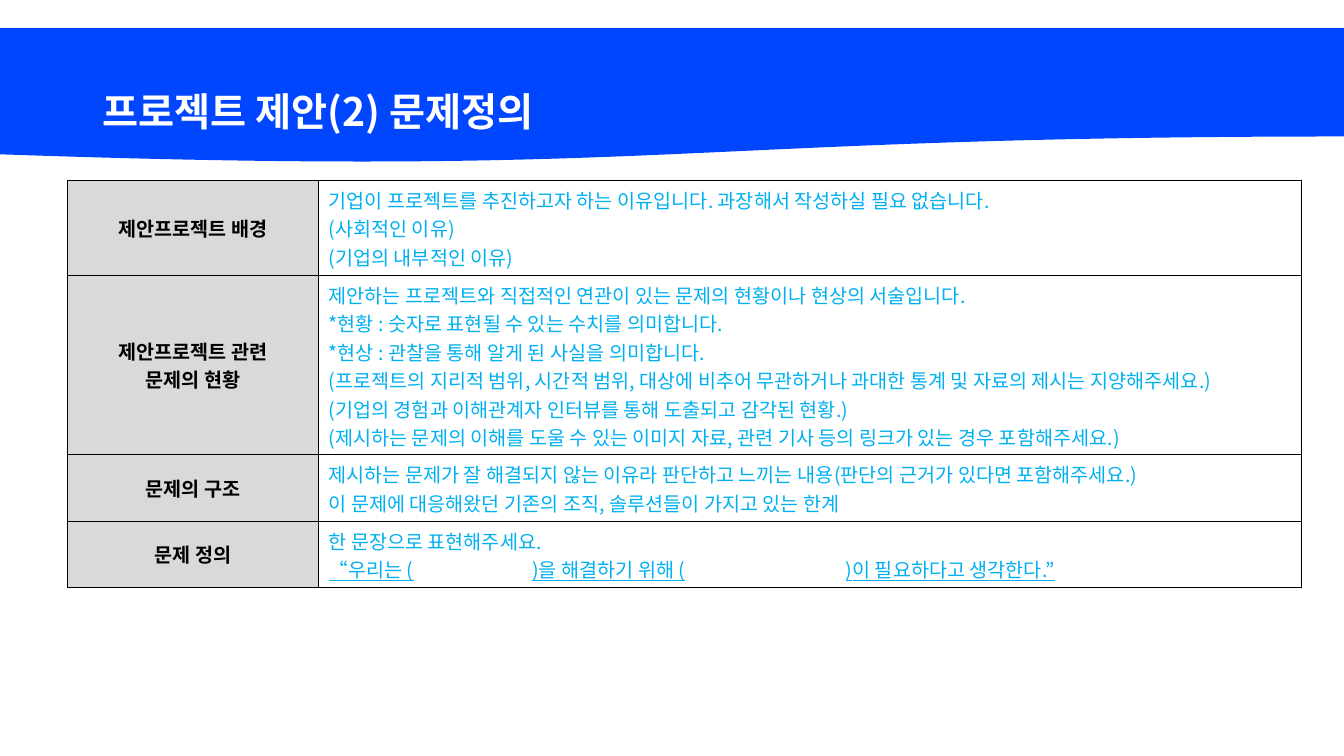
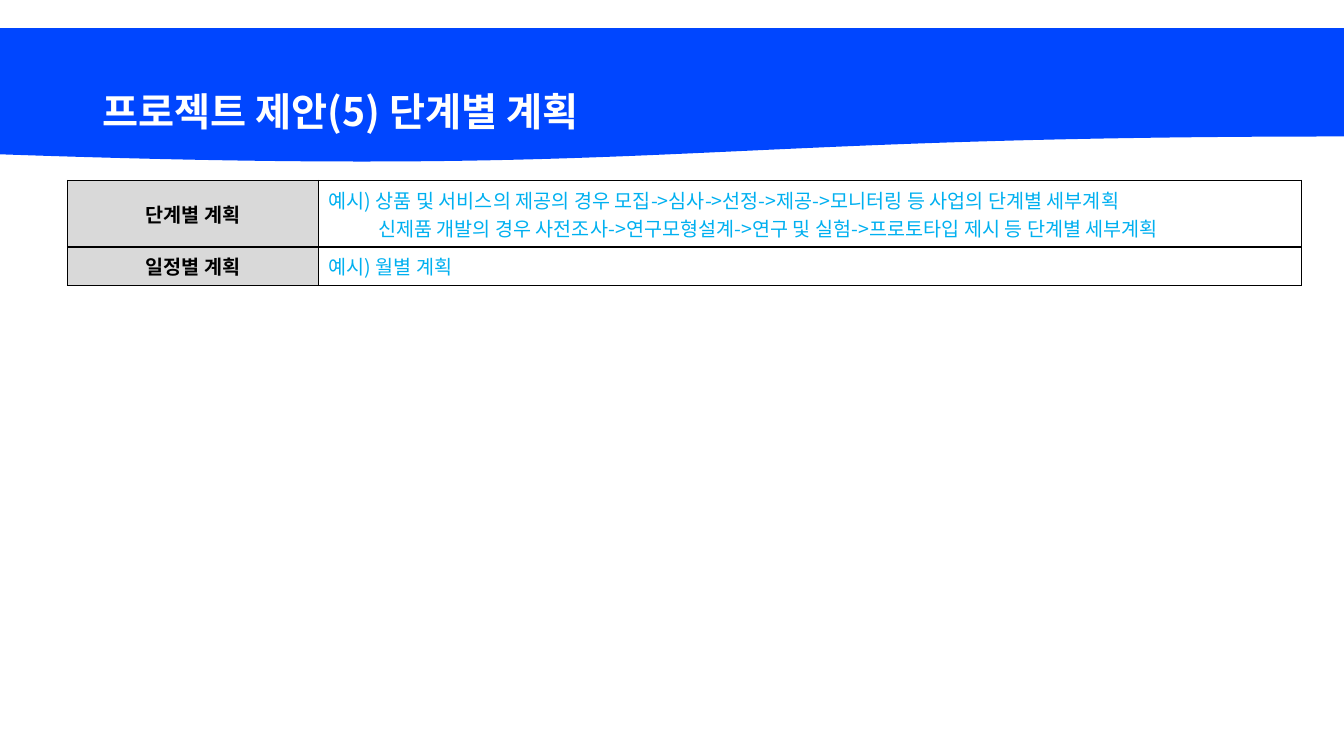
from dataclasses import dataclass

from lxml.etree import SubElement
from pptx import Presentation
from pptx.dml.color import RGBColor
from pptx.enum.shapes import MSO_SHAPE as Shape
from pptx.enum.text import MSO_ANCHOR as Anchor, PP_ALIGN as Align
from pptx.oxml.ns import qn
from pptx.util import Inches, Pt

BLUE = RGBColor(0x00, 0x46, 0xFF)
SKY = RGBColor(0x00, 0xB0, 0xF0)
GRAY = RGBColor(0xD9, 0xD9, 0xD9)
BLACK = RGBColor(0x00, 0x00, 0x00)
WHITE = RGBColor(0xFF, 0xFF, 0xFF)

FONT = "Noto Sans CJK KR"
SLIDE_WIDTH = 13.33
COLUMN_WIDTHS = (2.49, 9.75)
LINE_HEIGHT = 0.28
CELL_PADDING = 0.1


@dataclass(frozen=True)
class Line:
    text: str
    underline: bool = False
    indent: float = 0
    tabs: tuple[float, ...] = ()


@dataclass(frozen=True)
class Row:
    label: tuple[Line, ...]
    body: tuple[Line, ...]


@dataclass(frozen=True)
class Page:
    title: str
    rows: tuple[Row, ...]


PAGES = (
    Page("프로젝트 제안(2) 문제정의", (
        Row((Line("제안프로젝트 배경"),), (
            Line("기업이 프로젝트를 추진하고자 하는 이유입니다. 과장해서 작성하실 필요 없습니다."),
            Line("(사회적인 이유)"),
            Line("(기업의 내부적인 이유)"),
        )),
        Row((Line("제안프로젝트 관련"), Line("문제의 현황")), (
            Line("제안하는 프로젝트와 직접적인 연관이 있는 문제의 현황이나 현상의 서술입니다."),
            Line("*현황 : 숫자로 표현될 수 있는 수치를 의미합니다."),
            Line("*현상 : 관찰을 통해 알게 된 사실을 의미합니다."),
            Line("(프로젝트의 지리적 범위, 시간적 범위, 대상에 비추어 무관하거나 과대한 통계 및 자료의 제시는 지양해주세요.)"),
            Line("(기업의 경험과 이해관계자 인터뷰를 통해 도출되고 감각된 현황.)"),
            Line("(제시하는 문제의 이해를 도울 수 있는 이미지 자료, 관련 기사 등의 링크가 있는 경우 포함해주세요.)"),
        )),
        Row((Line("문제의 구조"),), (
            Line("제시하는 문제가 잘 해결되지 않는 이유라 판단하고 느끼는 내용(판단의 근거가 있다면 포함해주세요.)"),
            Line("이 문제에 대응해왔던 기존의 조직, 솔루션들이 가지고 있는 한계"),
        )),
        Row((Line("문제 정의"),), (
            Line("한 문장으로 표현해주세요."),
            Line("“우리는 (\t)을 해결하기 위해 (\t)이 필요하다고 생각한다.”",
                 underline=True, tabs=(2.02, 5.13)),
        )),
    )),
    Page("프로젝트 제안(5) 단계별 계획", (
        Row((Line("단계별 계획"),), (
            Line("예시) 상품 및 서비스의 제공의 경우 모집->심사->선정->제공->모니터링 등 사업의 단계별 세부계획"),
            Line("신제품 개발의 경우 사전조사->연구모형설계->연구 및 실험->프로토타입 제시 등 단계별 세부계획",
                 indent=0.49),
        )),
        Row((Line("일정별 계획"),), (Line("예시) 월별 계획"),)),
    )),
)


def style_paragraph(para, size: float, color: RGBColor, bold: bool) -> None:
    font = para.font
    font.size = Pt(size)
    font.bold = bold
    font.color.rgb = color
    font.name = FONT
    properties = para._p.get_or_add_pPr().find(qn("a:defRPr"))
    SubElement(properties, qn("a:ea"), typeface=FONT)


def add_band(slide) -> None:
    band = slide.shapes.add_shape(
        Shape.FLOWCHART_DOCUMENT, 0, Inches(0.28), Inches(SLIDE_WIDTH), Inches(1.34))
    band.shadow.inherit = False
    band.fill.solid()
    band.fill.fore_color.rgb = BLUE
    band.line.fill.background()


def add_title(slide, title: str) -> None:
    box = slide.shapes.add_textbox(Inches(0.92), Inches(0.4), Inches(11.5), Inches(1.45))
    frame = box.text_frame
    frame.word_wrap = True
    frame.vertical_anchor = Anchor.MIDDLE
    para = frame.paragraphs[0]
    para.text = title
    para.line_spacing = 0.9
    style_paragraph(para, 28, WHITE, True)


def add_borders(cell) -> None:
    properties = cell._tc.get_or_add_tcPr()
    for side in ("lnL", "lnR", "lnT", "lnB"):
        border = SubElement(properties, qn(f"a:{side}"), w=str(Pt(1)))
        fill = SubElement(border, qn("a:solidFill"))
        SubElement(fill, qn("a:srgbClr"), val=str(BLACK))


def write_lines(cell, lines: tuple[Line, ...], color: RGBColor, bold: bool, align: Align) -> None:
    cell.vertical_anchor = Anchor.MIDDLE
    frame = cell.text_frame
    for index, line in enumerate(lines):
        para = frame.add_paragraph() if index else frame.paragraphs[0]
        para.text = line.text
        para.alignment = align
        properties = para._p.get_or_add_pPr()
        if line.indent:
            properties.set("marL", str(Inches(line.indent)))
        if line.tabs:
            stops = SubElement(properties, qn("a:tabLst"))
            for position in line.tabs:
                SubElement(stops, qn("a:tab"), pos=str(Inches(position)), algn="l")
        style_paragraph(para, 14, color, bold)
        if line.underline:
            para.font.underline = True


def add_grid(slide, rows: tuple[Row, ...]) -> None:
    heights = [LINE_HEIGHT * len(row.body) + CELL_PADDING for row in rows]
    table = slide.shapes.add_table(
        len(rows), len(COLUMN_WIDTHS), Inches(0.67), Inches(1.79),
        Inches(sum(COLUMN_WIDTHS)), Inches(sum(heights))).table
    table.first_row = False
    table.horz_banding = False
    for column, width in zip(table.columns, COLUMN_WIDTHS):
        column.width = Inches(width)
    for index, (row, height) in enumerate(zip(rows, heights)):
        table.rows[index].height = Inches(height)
        label, body = table.cell(index, 0), table.cell(index, 1)
        for cell in (label, body):
            add_borders(cell)
        label.fill.solid()
        label.fill.fore_color.rgb = GRAY
        body.fill.background()
        write_lines(label, row.label, BLACK, True, Align.CENTER)
        write_lines(body, row.body, SKY, False, Align.LEFT)


def main() -> None:
    deck = Presentation()
    deck.slide_width = Inches(SLIDE_WIDTH)
    deck.slide_height = Inches(7.5)
    for page in PAGES:
        slide = deck.slides.add_slide(deck.slide_layouts[6])
        add_band(slide)
        add_title(slide, page.title)
        add_grid(slide, page.rows)
    deck.save("out.pptx")


if __name__ == "__main__":
    main()
